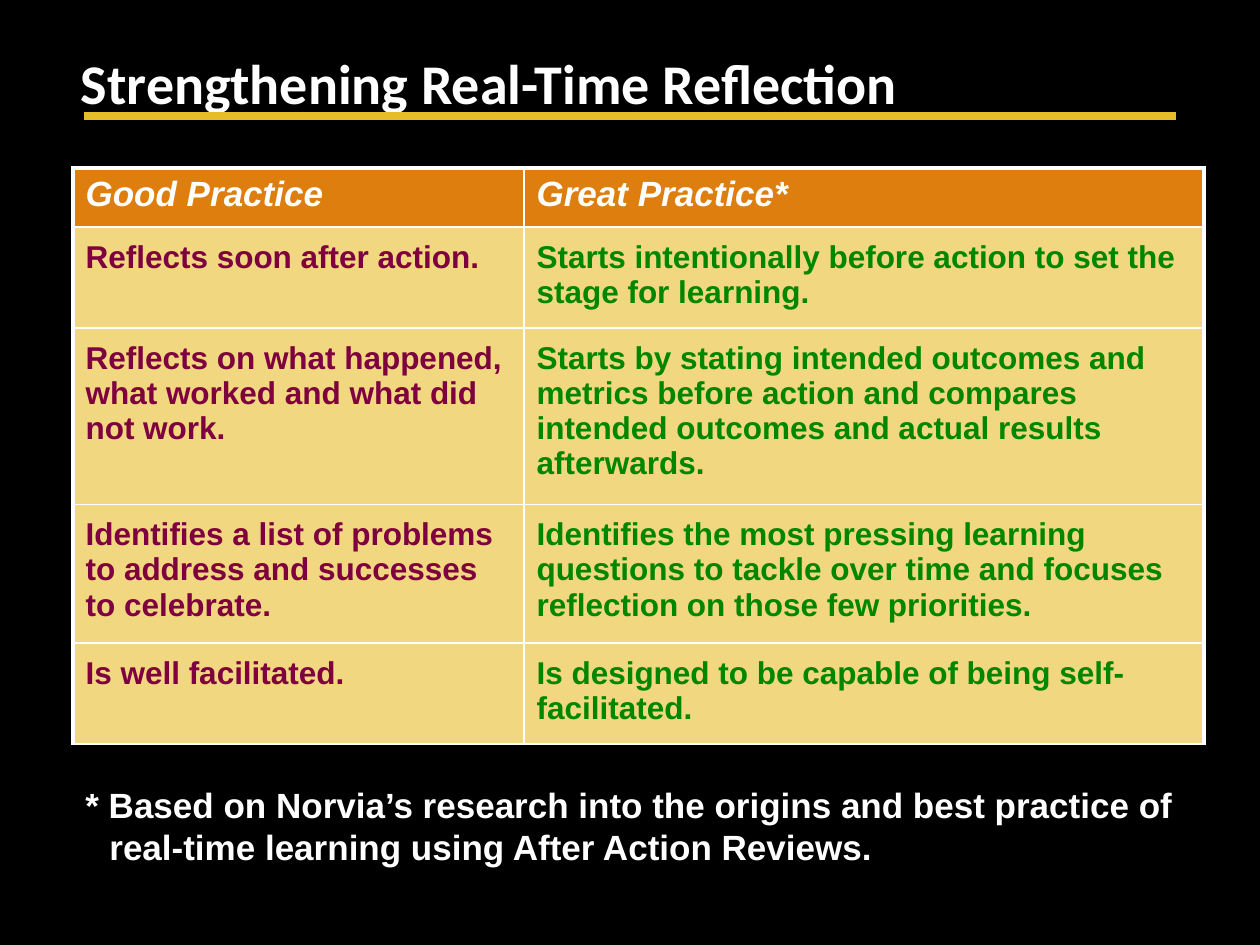
"""Build the slide that compares good and great real-time reflection."""
from typing import NamedTuple

import pptx
import pptx.dml.color
import pptx.enum.shapes
import pptx.enum.text
import pptx.oxml.ns
import pptx.util
from lxml import etree

EMU_PER_PX = 914400 / 126
BLACK = pptx.dml.color.RGBColor(0x00, 0x00, 0x00)
WHITE = pptx.dml.color.RGBColor(0xFF, 0xFF, 0xFF)
GOLD = pptx.dml.color.RGBColor(0xE7, 0xBC, 0x29)
ORANGE = pptx.dml.color.RGBColor(0xDD, 0x7E, 0x0E)
SAND = pptx.dml.color.RGBColor(0xF1, 0xD7, 0x7F)
PLUM = pptx.dml.color.RGBColor(0x7E, 0x00, 0x3F)
GREEN = pptx.dml.color.RGBColor(0x00, 0x86, 0x00)
THIN, THICK = 1, 2.25
COLUMN_WIDTHS = (451, 680)
ROW_HEIGHT = 59


class Practice(NamedTuple):
    good: str
    great: str


HEADER = Practice("Good Practice", "Great Practice*")
PRACTICES = (
    Practice("Reflects soon after action.",
             "Starts intentionally before action to set the stage for learning."),
    Practice("Reflects on what happened, what worked and what did not work.",
             "Starts by stating intended outcomes and metrics before action and "
             "compares intended outcomes and actual results afterwards."),
    Practice("Identifies a list of problems to address and successes to celebrate.",
             "Identifies the most pressing learning questions to tackle over time "
             "and focuses reflection on those few priorities."),
    Practice("Is well facilitated.",
             "Is designed to be capable of being self-facilitated."),
)


def px(length: int) -> pptx.util.Emu:
    """Turn pixels into EMU."""
    return pptx.util.Emu(round(length * EMU_PER_PX))


def write_text(frame, text: str, *, size: int, color=WHITE, font="Arial", italic=False):
    """Fill a text frame with one bold paragraph and return the paragraph."""
    frame.word_wrap = True
    para = frame.paragraphs[0]
    span = para.add_run()
    span.text = text
    span.font.name = font
    span.font.size = pptx.util.Pt(size)
    span.font.bold = True
    span.font.italic = italic
    span.font.color.rgb = color
    return para


def add_box(page, left: int, top: int, width: int, height: int):
    """Add an empty text box and return its text frame."""
    return page.shapes.add_textbox(px(left), px(top), px(width), px(height)).text_frame


def add_title(page, text: str) -> None:
    """Add the title and the gold rule below it."""
    frame = add_box(page, 63, 38, 1134, 88)
    frame.margin_left = frame.margin_right = px(18)
    frame.margin_top = frame.margin_bottom = px(9)
    frame.vertical_anchor = pptx.enum.text.MSO_ANCHOR.MIDDLE
    write_text(frame, text, size=32, font="Calibri")
    rule = page.shapes.add_connector(
        pptx.enum.shapes.MSO_CONNECTOR.STRAIGHT, px(84), px(116), px(1176), px(116))
    rule.line.color.rgb = GOLD
    rule.line.width = pptx.util.Pt(5)
    etree.SubElement(rule._element.spPr, pptx.oxml.ns.qn("a:effectLst"))


def set_borders(cell, **widths: float) -> None:
    """Draw white cell borders, named by side, with widths in points."""
    properties = cell._tc.get_or_add_tcPr()
    for side, width in widths.items():
        line = etree.SubElement(properties, pptx.oxml.ns.qn(f"a:ln{side}"),
                                w=str(pptx.util.Pt(width)))
        fill = etree.SubElement(line, pptx.oxml.ns.qn("a:solidFill"))
        etree.SubElement(fill, pptx.oxml.ns.qn("a:srgbClr"), val=str(WHITE))


def fill_cell(cell, text: str, column: int, is_header: bool) -> None:
    """Write and style one table cell."""
    set_borders(cell,
                L=THIN if column else THICK,
                R=THICK if column else THIN,
                T=THICK if is_header else THIN,
                B=THIN)
    cell.fill.solid()
    cell.fill.fore_color.rgb = ORANGE if is_header else SAND
    if is_header:
        write_text(cell.text_frame, text, size=20, italic=True)
    else:
        cell.margin_top = cell.margin_bottom = pptx.util.Inches(0.1)
        write_text(cell.text_frame, text, size=18, color=(PLUM, GREEN)[column])


def add_practice_table(page) -> None:
    """Add the table of good and great practices."""
    rows = (HEADER, *PRACTICES)
    holder = page.shapes.add_table(len(rows), len(COLUMN_WIDTHS), px(73), px(168),
                                   px(sum(COLUMN_WIDTHS)), px(576))
    table = holder.table
    for column, width in enumerate(COLUMN_WIDTHS):
        table.columns[column].width = px(width)
    for index, practice in enumerate(rows):
        table.rows[index].height = px(ROW_HEIGHT)
        for column, text in enumerate(practice):
            fill_cell(table.cell(index, column), text, column, index == 0)
    holder.height = px(576)


def add_footnote(page, text: str) -> None:
    """Add the footnote with a hanging indent."""
    frame = add_box(page, 73, 777, 1144, 97)
    para = write_text(frame, text, size=20)
    properties = para._p.get_or_add_pPr()
    properties.set("marL", str(px(24)))
    properties.set("indent", str(px(-24)))


def main() -> None:
    """Build and save the deck."""
    deck = pptx.Presentation()
    deck.slide_width, deck.slide_height = px(1260), px(945)
    page = deck.slides.add_slide(deck.slide_layouts[6])
    page.background.fill.solid()
    page.background.fill.fore_color.rgb = BLACK
    add_title(page, "Strengthening Real-Time Reflection")
    add_practice_table(page)
    add_footnote(page, "* Based on Norvia’s research into the origins and best practice "
                       "of real-time learning using After Action Reviews.")
    deck.save("out.pptx")


if __name__ == "__main__":
    main()
